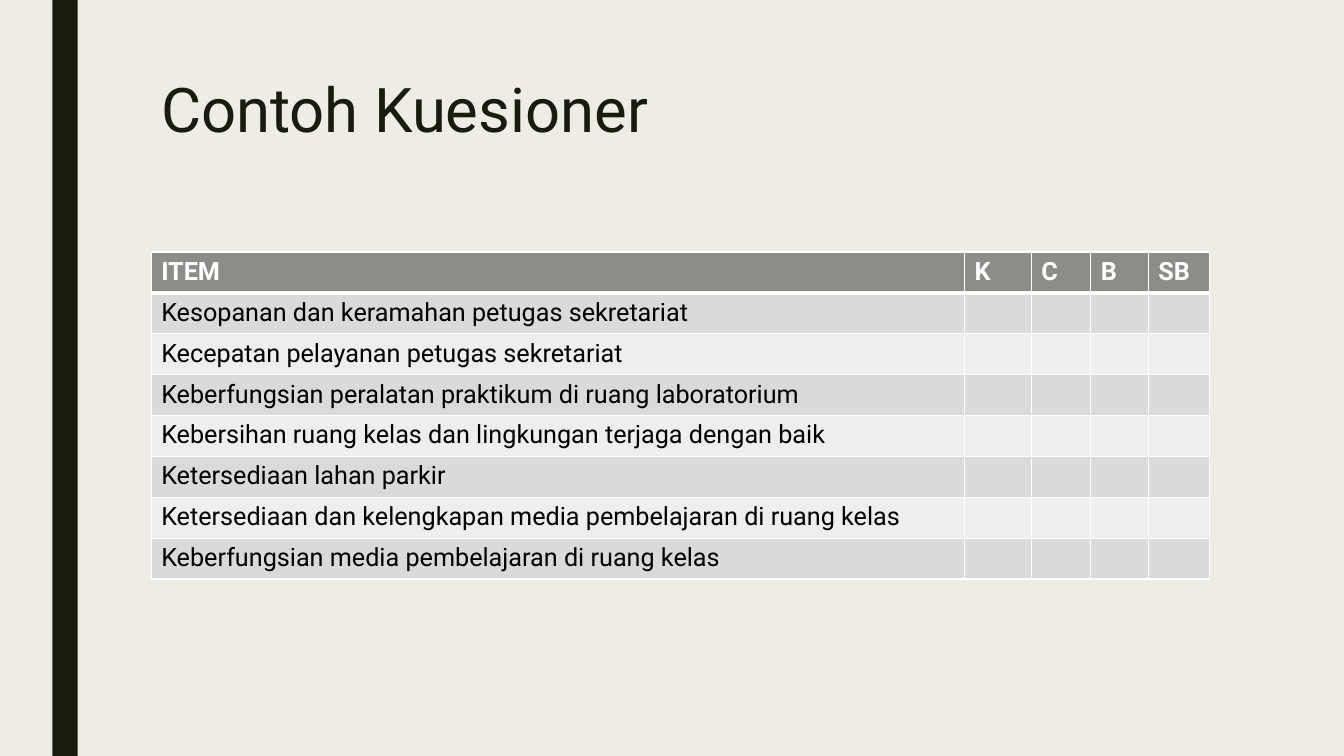
from dataclasses import dataclass

from lxml import etree
from pptx import Presentation
from pptx.dml.color import RGBColor
from pptx.enum.shapes import MSO_SHAPE
from pptx.enum.text import MSO_ANCHOR
from pptx.oxml.ns import qn
from pptx.slide import Slide
from pptx.table import Table, _Cell
from pptx.text.text import _Paragraph
from pptx.util import Cm, Pt

RECTANGLE = MSO_SHAPE.RECTANGLE
TOP = MSO_ANCHOR.TOP
FONT = "Roboto"
COLORS = {
    "background": "EFEDE3",
    "dark": "191B0E",
    "header": "8C8D86",
    "odd": "DADBD9",
    "even": "EEEEED",
    "white": "FFFFFF",
    "black": "000000",
}
COLUMN_WIDTHS = [20.5, 1.68, 1.5, 1.45, 1.54]
ROW_HEIGHT = 1.03
THIN, THICK = 1, 3
HEADINGS = ["ITEM", "K", "C", "B", "SB"]
ITEMS = [
    "Kesopanan dan keramahan petugas sekretariat",
    "Kecepatan pelayanan petugas sekretariat",
    "Keberfungsian peralatan praktikum di ruang laboratorium",
    "Kebersihan ruang kelas dan lingkungan terjaga dengan baik",
    "Ketersediaan lahan parkir",
    "Ketersediaan dan kelengkapan media pembelajaran di ruang kelas",
    "Keberfungsian media pembelajaran di ruang kelas",
]


@dataclass
class TableRow:
    texts: list[str]
    fill: str
    color: str = "black"
    bold: bool = False
    top: int = THIN
    bottom: int = THIN


def rgb(name: str) -> RGBColor:
    return RGBColor.from_string(COLORS[name])


def add_run(paragraph: _Paragraph, text: str, size: int, color: str, bold: bool = False) -> None:
    run = paragraph.add_run()
    run.text = text
    run.font.name = FONT
    run.font.size = Pt(size)
    run.font.bold = bold
    run.font.color.rgb = rgb(color)


def set_borders(cell: _Cell, top: int, bottom: int) -> None:
    properties = cell._tc.get_or_add_tcPr()
    for side, width in (("L", THIN), ("R", THIN), ("T", top), ("B", bottom)):
        line = etree.SubElement(properties, qn(f"a:ln{side}"), w=str(Pt(width)))
        fill = etree.SubElement(line, qn("a:solidFill"))
        etree.SubElement(fill, qn("a:srgbClr"), val=COLORS["white"])


def fill_row(table: Table, index: int, row: TableRow) -> None:
    table.rows[index].height = Cm(ROW_HEIGHT)
    for column, text in enumerate(row.texts):
        cell = table.cell(index, column)
        set_borders(cell, row.top, row.bottom)
        cell.fill.solid()
        cell.fill.fore_color.rgb = rgb(row.fill)
        if text:
            add_run(cell.text_frame.paragraphs[0], text, 18, row.color, row.bold)


def add_side_bar(slide: Slide) -> None:
    bar = slide.shapes.add_shape(RECTANGLE, Cm(1.32), Cm(0), Cm(0.64), Cm(19.05))
    bar.shadow.inherit = False
    bar.fill.solid()
    bar.fill.fore_color.rgb = rgb("dark")
    bar.line.fill.background()


def add_title(slide: Slide) -> None:
    title = slide.shapes.add_textbox(Cm(3.81), Cm(1.9), Cm(26.67), Cm(4.11))
    frame = title.text_frame
    frame.word_wrap = True
    frame.vertical_anchor = TOP
    paragraph = frame.paragraphs[0]
    paragraph.line_spacing = 0.89
    add_run(paragraph, "Contoh Kuesioner", 44, "dark")


def add_questionnaire(slide: Slide) -> None:
    rows = [TableRow(HEADINGS, "header", "white", bold=True, bottom=THICK)]
    for index, item in enumerate(ITEMS):
        texts = [item] + [""] * (len(HEADINGS) - 1)
        fill = "even" if index % 2 else "odd"
        rows.append(TableRow(texts, fill, top=THIN if index else THICK))

    table = slide.shapes.add_table(
        len(rows), len(HEADINGS), Cm(3.81), Cm(6.35),
        Cm(sum(COLUMN_WIDTHS)), Cm(ROW_HEIGHT * len(rows)),
    ).table
    for column, width in zip(table.columns, COLUMN_WIDTHS):
        column.width = Cm(width)
    for index, row in enumerate(rows):
        fill_row(table, index, row)


def main() -> None:
    presentation = Presentation()
    presentation.slide_width = Cm(33.87)
    presentation.slide_height = Cm(19.05)
    slide = presentation.slides.add_slide(presentation.slide_layouts[6])

    # Background and side bar
    slide.background.fill.solid()
    slide.background.fill.fore_color.rgb = rgb("background")
    add_side_bar(slide)

    # Title and questionnaire table
    add_title(slide)
    add_questionnaire(slide)

    presentation.save("out.pptx")


if __name__ == "__main__":
    main()
